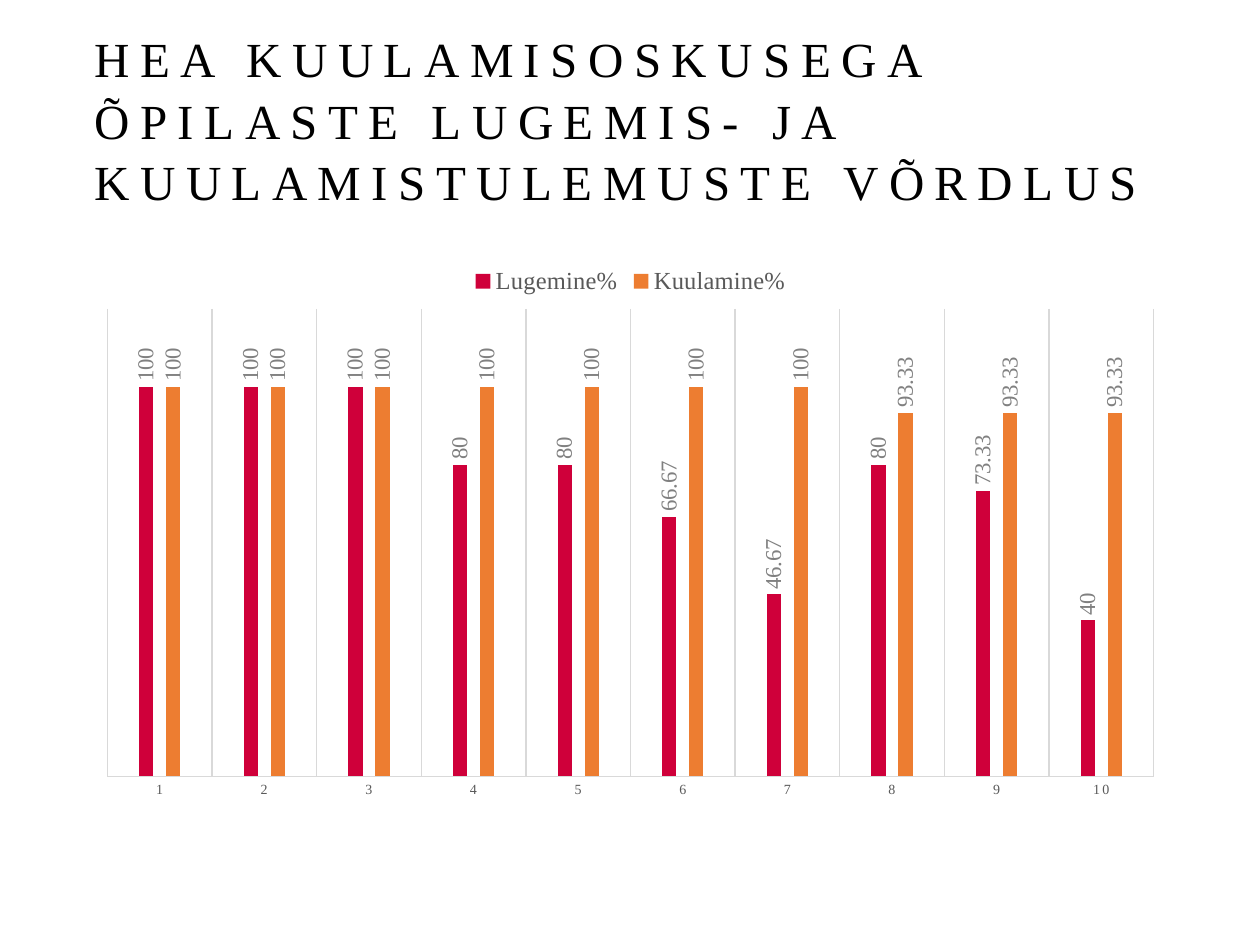
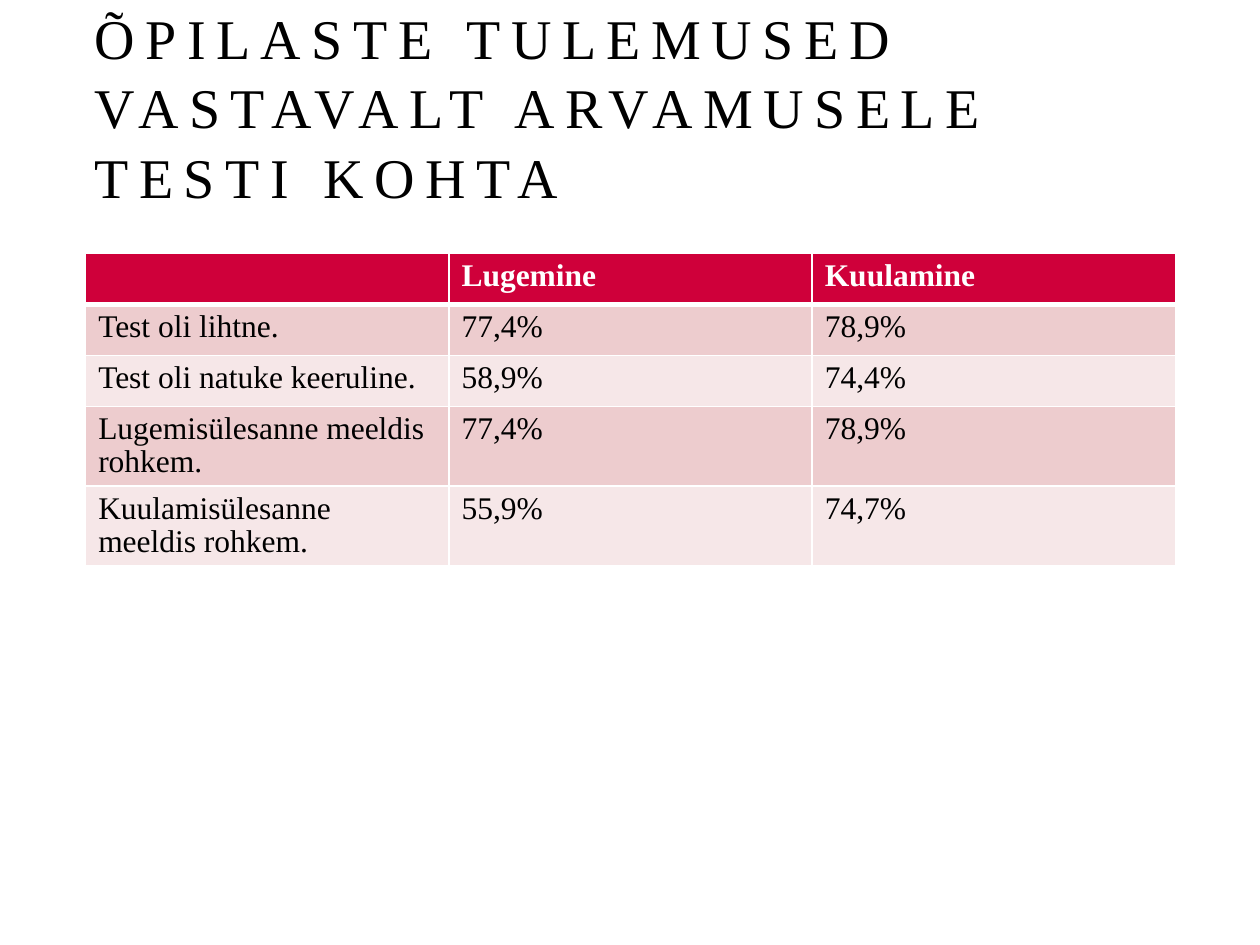
from lxml.etree import fromstring
from pptx import Presentation
from pptx.chart.data import CategoryChartData
from pptx.dml.color import RGBColor
from pptx.enum.chart import XL_CHART_TYPE, XL_LABEL_POSITION, XL_LEGEND_POSITION, XL_TICK_MARK
from pptx.enum.text import MSO_ANCHOR, MSO_AUTO_SIZE, PP_ALIGN
from pptx.oxml import parse_xml
from pptx.oxml.ns import nsdecls
from pptx.util import Inches, Pt

# Shared look; areas are shares of the slide: left, top, width, height
WIDTH, HEIGHT = Inches(10), Inches(7.5)
FONT = "Times New Roman"
CRIMSON, ORANGE = "CF003A", "ED7D31"
BLACK, WHITE = "000000", "FFFFFF"
DARK_GREY, MID_GREY, LIGHT_GREY = "595959", "808080", "D9D9D9"
BANDS = ("EDCCCE", "F6E7E8")
TITLE_AREA = (0.065, 0.045, 0.871, 0.18)
CONTENT_AREA = (0.068, 0.268, 0.865, 0.589)
ROW_SHARE = 0.054

PUPILS = [str(n) for n in range(1, 11)]
SCORES = (
    ("Lugemine%", CRIMSON, (100, 100, 100, 80, 80, 66.67, 46.67, 80, 73.33, 40)),
    ("Kuulamine%", ORANGE, (100,) * 7 + (93.33,) * 3),
)
OPINIONS = (
    ("", "Lugemine", "Kuulamine"),
    ("Test oli lihtne.", "77,4%", "78,9%"),
    ("Test oli natuke keeruline.", "58,9%", "74,4%"),
    ("Lugemisülesanne meeldis rohkem.", "77,4%", "78,9%"),
    ("Kuulamisülesanne meeldis rohkem.", "55,9%", "74,7%"),
)


def rgb(color):
    return RGBColor.from_string(color)


def area(shares):
    return [int(share * side) for share, side in zip(shares, (WIDTH, HEIGHT) * 2)]


def style(font, size, color, bold=False):
    font.name, font.size, font.bold = FONT, Pt(size), bold
    font.color.rgb = rgb(color)


def titled_slide(prs, title, size):
    s = prs.slides.add_slide(prs.slide_layouts[5])
    sp = s.shapes.title
    sp.left, sp.top, sp.width, sp.height = area(TITLE_AREA)
    tf = sp.text_frame
    tf.text = title
    tf.word_wrap, tf.auto_size = True, MSO_AUTO_SIZE.NONE
    tf.vertical_anchor = MSO_ANCHOR.BOTTOM
    tf.margin_bottom = Inches(0.02)
    p = tf.paragraphs[0]
    p.alignment, p.line_spacing = PP_ALIGN.LEFT, 1.04
    r = p.runs[0]
    style(r.font, size, BLACK)
    r.font._element.set("spc", "600")
    return s


def grey_line(line):
    line.color.rgb = rgb(LIGHT_GREY)
    line.width = Pt(0.75)


def place_plot(root, **shares):
    values = "".join(f'<c:{k} val="{v}"/>' for k, v in shares.items())
    layout = parse_xml(
        f'<c:layout {nsdecls("c")}><c:manualLayout><c:layoutTarget val="inner"/>'
        f'<c:xMode val="edge"/><c:yMode val="edge"/>{values}</c:manualLayout></c:layout>')
    plot_area = root.xpath("c:chart/c:plotArea")[0]
    for old in plot_area.xpath("c:layout"):
        plot_area.remove(old)
    plot_area.insert(0, layout)


def add_score_chart(s):
    data = CategoryChartData()
    data.categories = PUPILS
    for name, _, values in SCORES:
        data.add_series(name, values)
    chart = s.shapes.add_chart(
        XL_CHART_TYPE.COLUMN_CLUSTERED, *area(CONTENT_AREA), data).chart
    style(chart.font, 10, BLACK)
    chart.has_title = False
    chart.has_legend = True
    chart.legend.position = XL_LEGEND_POSITION.TOP
    chart.legend.include_in_layout = False
    style(chart.legend.font, 14, DARK_GREY)

    # Axes
    pupils, percent = chart.category_axis, chart.value_axis
    pupils.major_tick_mark = XL_TICK_MARK.NONE
    pupils.has_major_gridlines = True
    grey_line(pupils.format.line)
    grey_line(pupils.major_gridlines.format.line)
    style(pupils.tick_labels.font, 8, DARK_GREY)
    percent.minimum_scale, percent.maximum_scale = 0, 120
    percent.has_major_gridlines = False
    percent.visible = False

    # Columns with upright value labels
    plot = chart.plots[0]
    plot.gap_width, plot.overlap, plot.vary_by_categories = 444, -90, False
    for series, (_, color, _) in zip(plot.series, SCORES):
        series.format.fill.solid()
        series.format.fill.fore_color.rgb = rgb(color)
        labels = series.data_labels
        labels.show_value = True
        labels.position = XL_LABEL_POSITION.OUTSIDE_END
        style(labels.font, 13, MID_GREY)
    root = chart._chartSpace
    for body in root.xpath(".//c:dLbls/c:txPr/a:bodyPr"):
        body.set("rot", "-5400000")
        body.set("vert", "horz")
    for props in root.xpath(".//c:catAx/c:txPr//a:defRPr"):
        props.set("spc", "120")
    place_plot(root, x=0.02, y=0.1, w=0.96, h=0.84)


def border_cell(cell, bottom):
    props = cell._tc.get_or_add_tcPr()
    for i, (side, width) in enumerate((("L", 1), ("R", 1), ("T", 1), ("B", bottom))):
        props.insert(i, fromstring(
            f'<a:ln{side} {nsdecls("a")} w="{Pt(width)}"><a:solidFill>'
            f'<a:srgbClr val="{WHITE}"/></a:solidFill></a:ln{side}>'))


def add_opinion_table(s):
    left, top, width, _ = area(CONTENT_AREA)
    row_height = int(ROW_SHARE * HEIGHT)
    rows, cols = len(OPINIONS), len(OPINIONS[0])
    table = s.shapes.add_table(rows, cols, left, top, width, row_height * rows).table
    for i, texts in enumerate(OPINIONS):
        header = i == 0
        for j, text in enumerate(texts):
            cell = table.cell(i, j)
            cell.text = text
            cell.fill.solid()
            cell.fill.fore_color.rgb = rgb(CRIMSON if header else BANDS[(i - 1) % 2])
            border_cell(cell, 3 if header else 1)
            p = cell.text_frame.paragraphs[0]
            p.line_spacing = 0.96
            for r in p.runs:
                style(r.font, 18, WHITE if header else BLACK, header)


def main():
    prs = Presentation()
    prs.slide_width, prs.slide_height = WIDTH, HEIGHT
    add_score_chart(titled_slide(
        prs, "HEA KUULAMISOSKUSEGA ÕPILASTE LUGEMIS- JA KUULAMISTULEMUSTE VÕRDLUS", 28))
    add_opinion_table(titled_slide(
        prs, "ÕPILASTE TULEMUSED VASTAVALT ARVAMUSELE TESTI KOHTA", 32))
    prs.save("out.pptx")


if __name__ == "__main__":
    main()
